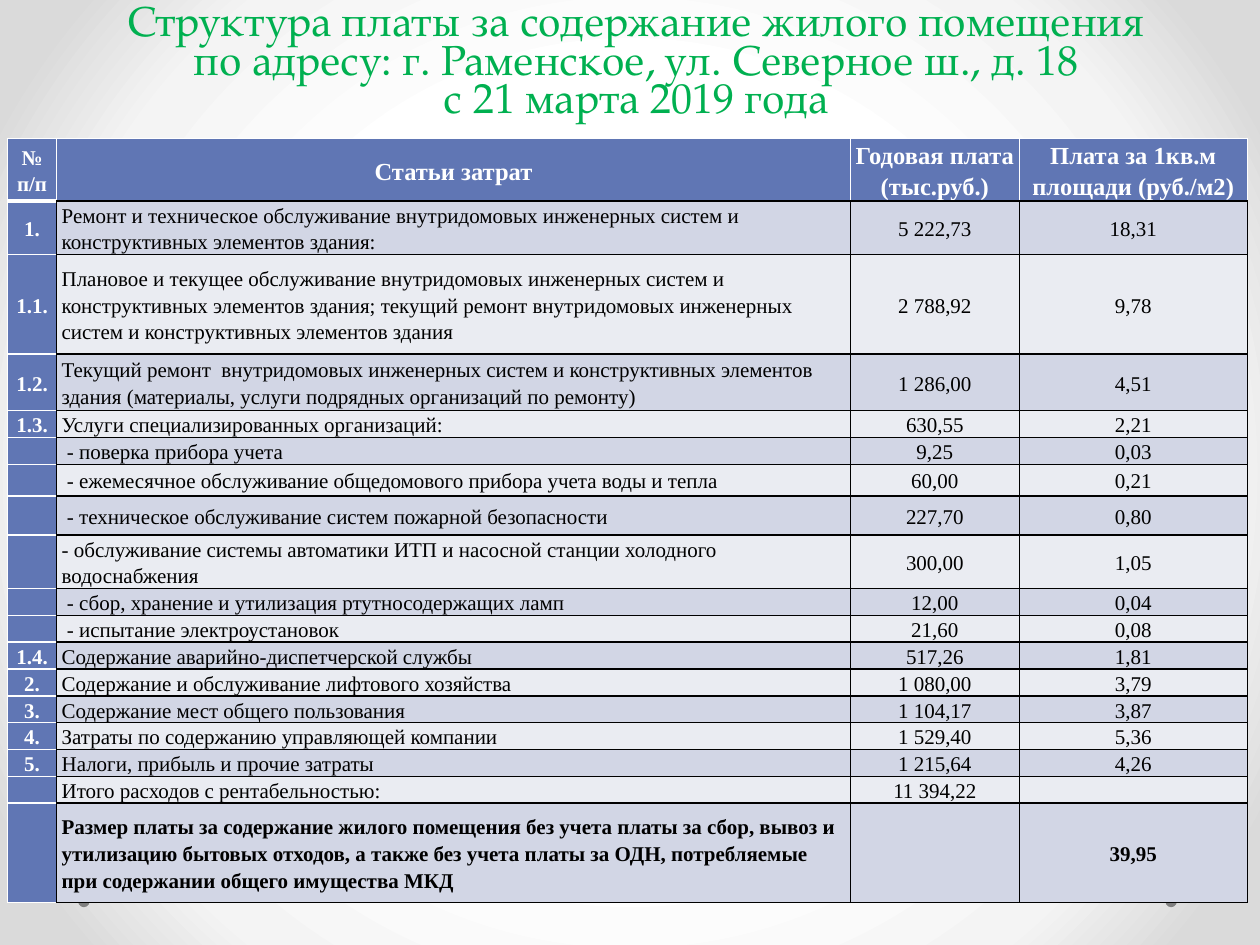
"""Build the slide with the yearly housing fee table."""
from dataclasses import dataclass
from typing import NamedTuple

from lxml import etree
from pptx import Presentation
from pptx.dml.color import RGBColor
from pptx.enum.shapes import MSO_SHAPE
from pptx.enum.text import MSO_ANCHOR, MSO_AUTO_SIZE, PP_ALIGN
from pptx.oxml import parse_xml
from pptx.oxml.ns import qn
from pptx.util import Inches, Pt

OVAL = MSO_SHAPE.OVAL
MIDDLE, BOTTOM = MSO_ANCHOR.MIDDLE, MSO_ANCHOR.BOTTOM
LEFT, CENTER = PP_ALIGN.LEFT, PP_ALIGN.CENTER
FIXED = MSO_AUTO_SIZE.NONE
SPACE = ('xmlns:a="http://schemas.openxmlformats.org/drawingml/2006/main" '
         'xmlns:p="http://schemas.openxmlformats.org/presentationml/2006/main"')


@dataclass(frozen=True)
class Theme:
    """Colours, fonts and type sizes."""
    green: str = "00B050"
    blue: str = "6076B4"
    dark: str = "D2D6E5"
    light: str = "EAECF2"
    white: str = "FFFFFF"
    black: str = "000000"
    dot: str = "808080"
    glow: tuple = ((50, "FFFFFF"), (76, "F4F4F4"), (92, "DADADA"))
    display: str = "TeX Gyre Pagella"
    body: str = "Times New Roman"
    title: int = 24
    head: int = 14
    text: int = 12


class Row(NamedTuple):
    """One table row: height, then the four cells."""
    tall: float
    num: str
    item: str
    year: str
    rate: str


class Style(NamedTuple):
    """Look of one cell; edges run left, right, top, bottom."""
    fill: str
    ink: str
    size: int
    bold: bool
    align: PP_ALIGN
    edges: tuple


THEME = Theme()
COLS = (0.39, 6.3, 1.34, 1.81)
TITLE = ("Структура платы за содержание жилого помещения\v"
         "по адресу: г. Раменское, ул. Северное ш., д. 18\v"
         "с 21 марта 2019 года")
ROWS = (
    Row(0.39, "№ п/п", "Статьи затрат", "Годовая плата (тыс.руб.)",
        "Плата за 1кв.м площади (руб./м2)"),
    Row(0.39, "1.", "Ремонт и техническое обслуживание внутридомовых инженерных "
        "систем и конструктивных элементов здания:", "5 222,73", "18,31"),
    Row(0.79, "1.1.", "Плановое и текущее обслуживание внутридомовых инженерных "
        "систем и конструктивных элементов здания; текущий ремонт внутридомовых "
        "инженерных систем и конструктивных элементов здания", "2 788,92", "9,78"),
    Row(0.45, "1.2.", "Текущий ремонт  внутридомовых инженерных систем и "
        "конструктивных элементов здания (материалы, услуги подрядных "
        "организаций по ремонту)", "1 286,00", "4,51"),
    Row(0.2, "1.3.", "Услуги специализированных организаций:", "630,55", "2,21"),
    Row(0.2, "", " - поверка прибора учета", "9,25", "0,03"),
    Row(0.25, "", " - ежемесячное обслуживание общедомового прибора учета "
        "воды и тепла", "60,00", "0,21"),
    Row(0.31, "", " - техническое обслуживание систем пожарной безопасности",
        "227,70", "0,80"),
    Row(0.39, "", "- обслуживание системы автоматики ИТП и насосной станции "
        "холодного водоснабжения", "300,00", "1,05"),
    Row(0.2, "", " - сбор, хранение и утилизация ртутносодержащих ламп",
        "12,00", "0,04"),
    Row(0.2, "", " - испытание электроустановок", "21,60", "0,08"),
    Row(0.2, "1.4.", "Содержание аварийно-диспетчерской службы", "517,26", "1,81"),
    Row(0.2, "2.", "Содержание и обслуживание лифтового хозяйства",
        "1 080,00", "3,79"),
    Row(0.2, "3.", "Содержание мест общего пользования", "1 104,17", "3,87"),
    Row(0.2, "4.", "Затраты по содержанию управляющей компании",
        "1 529,40", "5,36"),
    Row(0.2, "5.", "Налоги, прибыль и прочие затраты", "1 215,64", "4,26"),
    Row(0.2, "", "Итого расходов с рентабельностью:", "11 394,22", ""),
    Row(0.79, "", "Размер платы за содержание жилого помещения без учета платы "
        "за сбор, вывоз и утилизацию бытовых отходов, а также без учета платы "
        "за ОДН, потребляемые при содержании общего имущества МКД", "", "39,95"),
)


def tint(code: str) -> RGBColor:
    return RGBColor.from_string(code)


def set_font(font, name: str, size: int, ink: str, bold: bool) -> None:
    font.name, font.size, font.bold = name, Pt(size), bold
    font.color.rgb = tint(ink)


def paint_back(slide) -> None:
    stops = "".join(f'<a:gs pos="{pos * 1000}"><a:srgbClr val="{code}"/></a:gs>'
                    for pos, code in THEME.glow)
    slide.element.cSld.insert(0, parse_xml(
        f'<p:bg {SPACE}><p:bgPr><a:gradFill><a:gsLst>{stops}</a:gsLst>'
        '<a:path path="circle"><a:fillToRect l="50000" t="50000" r="50000" '
        'b="50000"/></a:path></a:gradFill><a:effectLst/></p:bgPr></p:bg>'))


def add_dot(slide, left: float) -> None:
    dot = slide.shapes.add_shape(OVAL, Inches(left), Inches(7.11),
                                 Inches(0.09), Inches(0.09))
    dot.shadow.inherit = False
    dot.fill.solid()
    dot.fill.fore_color.rgb = tint(THEME.dot)
    dot.line.fill.background()


def set_title(slide) -> None:
    title = slide.shapes.title
    title.left, title.top = Inches(0.03), Inches(0.19)
    title.width, title.height = Inches(10.04), Inches(1.75)
    frame = title.text_frame
    frame.text = TITLE
    frame.auto_size, frame.vertical_anchor = FIXED, BOTTOM
    frame.margin_top, frame.margin_bottom = 0, Inches(0.97)
    para = frame.paragraphs[0]
    para.alignment, para.line_spacing = CENTER, Pt(22)
    set_font(para.font, THEME.display, THEME.title, THEME.green, False)


def pick_style(row: int, col: int) -> Style:
    white, black = (THEME.white, 1), (THEME.black, 1)
    if row == 0:
        base = black if col else (THEME.white, 3)
        size = THEME.head if col else THEME.text
        return Style(THEME.blue, THEME.white, size, True, CENTER,
                     (white, white, white, base))
    if col == 0:
        top = (THEME.white, 3) if row == 1 else white
        return Style(THEME.blue, THEME.white, THEME.text, True, CENTER,
                     (white, black, top, white))
    return Style(THEME.dark if row % 2 else THEME.light, THEME.black, THEME.text,
                 row == len(ROWS) - 1, LEFT if col == 1 else CENTER, (black,) * 4)


def set_edges(cell, edges: tuple) -> None:
    props = cell._tc.get_or_add_tcPr()
    for spot, (side, (code, width)) in enumerate(zip("LRTB", edges)):
        line = etree.Element(qn(f"a:ln{side}"), w=str(Pt(width)))
        fill = etree.SubElement(line, qn("a:solidFill"))
        etree.SubElement(fill, qn("a:srgbClr"), val=code)
        props.insert(spot, line)


def fill_cell(cell, text: str, style: Style) -> None:
    cell.text = text
    cell.vertical_anchor = MIDDLE
    cell.margin_left = cell.margin_right = Inches(0.04)
    cell.margin_top = cell.margin_bottom = 0
    cell.fill.solid()
    cell.fill.fore_color.rgb = tint(style.fill)
    set_edges(cell, style.edges)
    para = cell.text_frame.paragraphs[0]
    para.alignment, para.line_spacing = style.align, 1.15
    set_font(para.font, THEME.body, style.size, style.ink, style.bold)
    if not text:
        etree.SubElement(para._p, qn("a:endParaRPr"), sz=str(style.size * 100))


def add_fees(slide) -> None:
    frame = slide.shapes.add_table(len(ROWS), len(COLS), Inches(0.06), Inches(1.1),
                                   Inches(sum(COLS)), Inches(6.36))
    table = frame.table
    for col, width in enumerate(COLS):
        table.columns[col].width = Inches(width)
    for row, (tall, *texts) in enumerate(ROWS):
        table.rows[row].height = Inches(tall)
        for col, text in enumerate(texts):
            fill_cell(table.cell(row, col), text, pick_style(row, col))


def main() -> None:
    deck = Presentation()
    deck.slide_width, deck.slide_height = Inches(10), Inches(7.5)
    slide = deck.slides.add_slide(deck.slide_layouts[5])
    paint_back(slide)
    for left in (9.25, 0.62):
        add_dot(slide, left)
    set_title(slide)
    add_fees(slide)
    deck.save("out.pptx")


if __name__ == "__main__":
    main()
